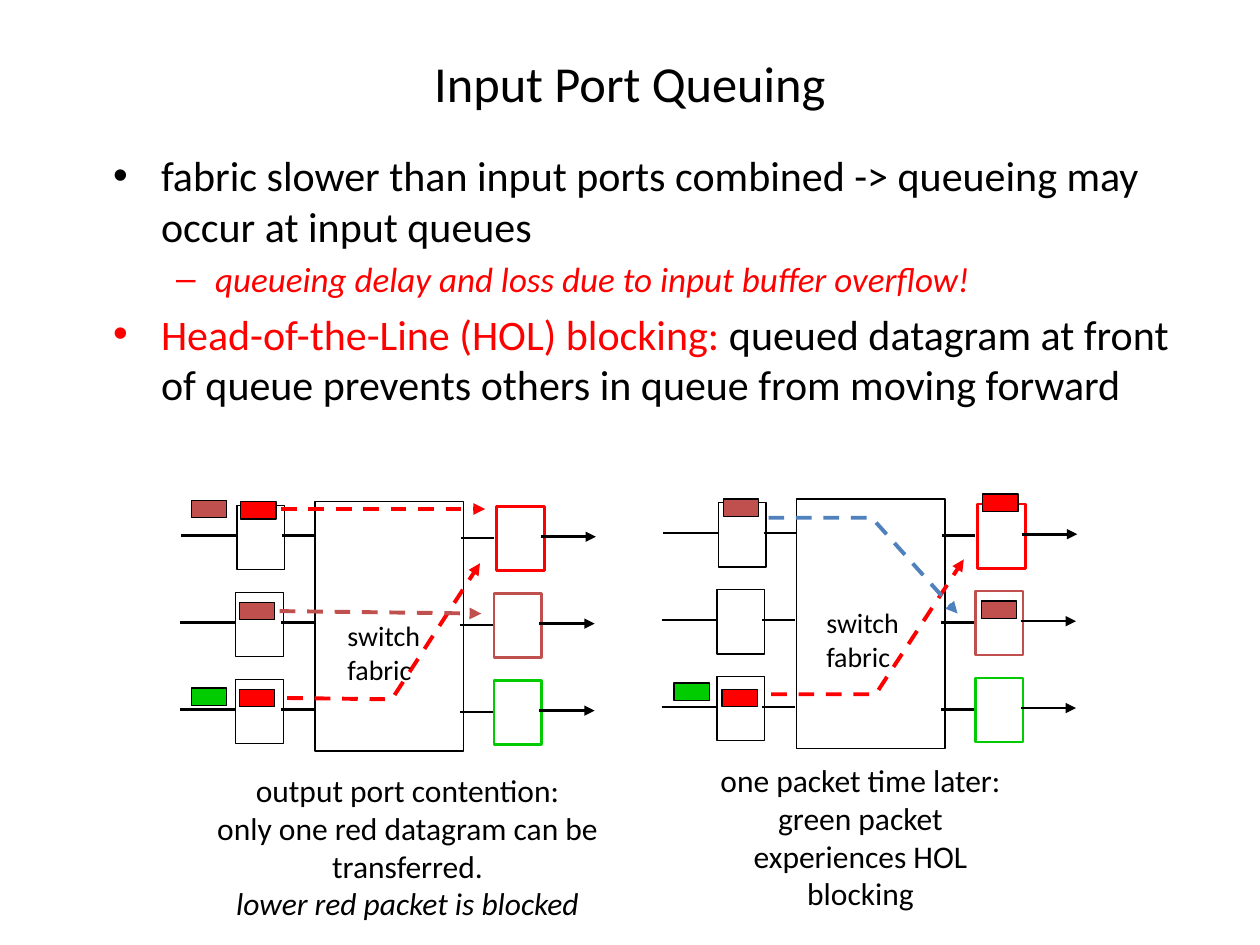
from lxml import etree
from pptx import Presentation
from pptx import util as u
from pptx.dml.color import RGBColor
from pptx.enum import dml, shapes, text
from pptx.oxml import ns

BLACK = RGBColor(0x00, 0x00, 0x00)
WHITE = RGBColor(0xFF, 0xFF, 0xFF)
RED = RGBColor(0xFF, 0x00, 0x00)
BRICK = RGBColor(0xC0, 0x50, 0x4D)
GREEN = RGBColor(0x00, 0xCC, 0x00)
BLUE = RGBColor(0x4F, 0x81, 0xBD)

PORT_SIZE = (0.38, 0.51)
PACKET_SIZE = (0.28, 0.14)
PORT_PITCH = 0.69
FABRIC_SIZE = (1.18, 1.98)


class SlideBuilder:
    font_name = "Calibri"
    thin, medium, thick = 0.75, 1.5, 2.25

    def __init__(self, slide):
        self.slide = slide

    def style_font(self, font, size, color=BLACK, italic=False):
        font.name = self.font_name
        font.size = u.Pt(size)
        font.color.rgb = color
        font.italic = italic

    def title(self, words, left, top, width, height):
        title = self.slide.shapes.title
        title.left, title.top = u.Inches(left), u.Inches(top)
        title.width, title.height = u.Inches(width), u.Inches(height)
        title.text_frame.text = words
        title.text_frame.vertical_anchor = text.MSO_ANCHOR.MIDDLE
        paragraph = title.text_frame.paragraphs[0]
        paragraph.alignment = text.PP_ALIGN.CENTER
        self.style_font(paragraph.font, 28.8)

    def text_box(self, left, top, width, height, wrap=True):
        box = self.slide.shapes.add_textbox(*map(u.Inches, (left, top, width, height)))
        box.text_frame.word_wrap = wrap
        return box.text_frame

    def paragraph(self, frame, words, size, align=text.PP_ALIGN.LEFT):
        """Fill the empty first paragraph of the frame, or add another."""
        paragraph = frame.paragraphs[0]
        if paragraph.runs:
            paragraph = frame.add_paragraph()
        paragraph.add_run().text = words
        paragraph.alignment = align
        self.style_font(paragraph.font, size)
        return paragraph

    def bullet(self, frame, words, size, mark, margin, hanging, color=BLACK, space=0):
        paragraph = self.paragraph(frame, words, size)
        properties = paragraph._p.get_or_add_pPr()
        properties.set("marL", str(u.Inches(margin)))
        properties.set("indent", str(-u.Inches(hanging)))
        paragraph.space_before = u.Pt(space)
        font_element = etree.Element(ns.qn("a:buFont"), typeface="Arial")
        mark_element = etree.Element(ns.qn("a:buChar"), char=mark)
        default_font = properties.find(ns.qn("a:defRPr"))
        default_font.addprevious(font_element)
        default_font.addprevious(mark_element)
        paragraph.runs[0].font.color.rgb = color
        return paragraph

    def box(self, left, top, size, fill=WHITE, border=BLACK, weight=thin, parent=None):
        shape = (parent or self.slide).shapes.add_shape(
            shapes.MSO_SHAPE.RECTANGLE, *map(u.Inches, (left, top, *size)))
        shape.shadow.inherit = False
        shape.fill.solid()
        shape.fill.fore_color.rgb = fill
        shape.line.color.rgb = border
        shape.line.width = u.Pt(weight)

    def packet(self, left, top, color):
        self.box(left, top, PACKET_SIZE, fill=color)

    def style_line(self, shape, color, weight, dashed, arrow):
        shape.line.color.rgb = color
        shape.line.width = u.Pt(weight)
        if dashed:
            shape.line.dash_style = dml.MSO_LINE.DASH
        if arrow:
            outline = shape._element.spPr.find(ns.qn("a:ln"))
            etree.SubElement(outline, ns.qn("a:tailEnd"), type="triangle")

    def line(self, start, end, color=BLACK, weight=medium, dashed=False,
             arrow=False, parent=None):
        connector = (parent or self.slide).shapes.add_connector(
            shapes.MSO_CONNECTOR.STRAIGHT, *map(u.Inches, (*start, *end)))
        self.style_line(connector, color, weight, dashed, arrow)
        etree.SubElement(connector._element.spPr, ns.qn("a:effectLst"))

    def packet_path(self, points, color):
        """Draw a dashed arrow through two or more points."""
        if len(points) == 2:
            self.line(*points, color, self.thick, dashed=True, arrow=True)
            return
        start, *rest = [tuple(map(u.Inches, point)) for point in points]
        builder = self.slide.shapes.build_freeform(*start)
        builder.add_line_segments(rest, close=False)
        shape = builder.convert_to_shape()
        shape.shadow.inherit = False
        shape.fill.background()
        self.style_line(shape, color, self.thick, dashed=True, arrow=True)

    def switch(self, left, top):
        """Draw the fabric at left, top with three input and three output ports."""
        group = self.slide.shapes.add_group_shape()
        self.box(left, top, FABRIC_SIZE, parent=group)
        for row, color in enumerate((RED, BRICK, GREEN)):
            port_top = top + 0.03 + row * PORT_PITCH
            shift = 0 if row == 0 else -0.02
            self.box(left - 0.62 + shift / 2, port_top, PORT_SIZE, parent=group)
            self.box(left + 1.44 + shift, port_top + 0.01, PORT_SIZE,
                     border=color, weight=self.medium, parent=group)
            wires = (
                (1.16, 0.26, 0.29, False),
                (-0.26, 0.26, 0.27, False),
                (-1.06, 0.44, 0.27, False),
                (1.79, 0.44, 0.28, True),
            )
            for offset, length, drop, arrow in wires:
                start = left + offset + shift / 2
                wire_top = top + drop + row * PORT_PITCH
                self.line((start, wire_top), (start + length, wire_top),
                          arrow=arrow, parent=group)

    def fabric_label(self, left, top):
        frame = self.text_box(left, top, 0.87, 0.64, wrap=False)
        for word in ("switch", "fabric"):
            self.paragraph(frame, word, 16)

    def caption(self, left, top, width, *lines):
        frame = self.text_box(left, top, width, 1.3)
        return [self.paragraph(frame, line, 18, text.PP_ALIGN.CENTER) for line in lines]


def main():
    presentation = Presentation()
    presentation.slide_width, presentation.slide_height = u.Inches(10), u.Inches(7.5)
    slide = presentation.slides.add_slide(presentation.slide_layouts[5])
    builder = SlideBuilder(slide)

    builder.title("Input Port Queuing", 0.75, 0.4, 8.5, 0.5)
    body = builder.text_box(0.8, 1.14, 8.86, 2.9)
    builder.bullet(body, "fabric slower than input ports combined -> queueing may "
                   "occur at input queues", 24, "•", 0.38, 0.38)
    delay = builder.bullet(body, "queueing delay and loss due to input buffer overflow!",
                           20, "–", 0.81, 0.31, RED, space=4)
    delay.level = 1
    delay.font.italic = True
    blocking = builder.bullet(body, "Head-of-the-Line (HOL) blocking:", 24, "•",
                              0.38, 0.38, RED, space=4.8)
    blocking.add_run().text = (" queued datagram at front of queue prevents others "
                               "in queue from moving forward")

    builder.switch(2.5, 3.98)
    builder.switch(6.32, 3.96)

    for left, top, color in ((1.91, 3.98, RED), (1.9, 4.78, BRICK), (1.9, 5.47, RED),
                             (1.52, 3.97, BRICK), (1.52, 5.46, GREEN)):
        builder.packet(left, top, color)
    builder.packet_path([(2.23, 4.04), (3.85, 4.04)], RED)
    builder.packet_path([(2.28, 5.54), (3.11, 5.55), (3.81, 4.47)], RED)

    contention = builder.caption(1.38, 6.07, 3.71, "output port contention:",
                                 "only one red datagram can be transferred.")[-1]
    contention.add_line_break()
    blocked = contention.add_run()
    blocked.text = "lower red packet is blocked"
    blocked.font.italic = True
    builder.caption(5.61, 5.99, 2.44,
                    "one packet time later: green packet experiences HOL blocking")
    builder.fabric_label(2.66, 4.86)
    builder.fabric_label(6.46, 4.76)

    for left, top, color in ((7.8, 3.92, RED), (5.74, 3.96, BRICK), (5.73, 5.47, RED),
                             (5.35, 5.42, GREEN), (7.79, 4.77, BRICK)):
        builder.packet(left, top, color)
    builder.packet_path([(6.12, 5.51), (6.95, 5.51), (7.65, 4.44)], RED)
    builder.packet_path([(6.1, 4.11), (6.92, 4.11), (7.6, 4.87)], BLUE)
    builder.packet_path([(2.22, 4.85), (3.82, 4.87)], BRICK)

    presentation.save("out.pptx")


if __name__ == "__main__":
    main()
